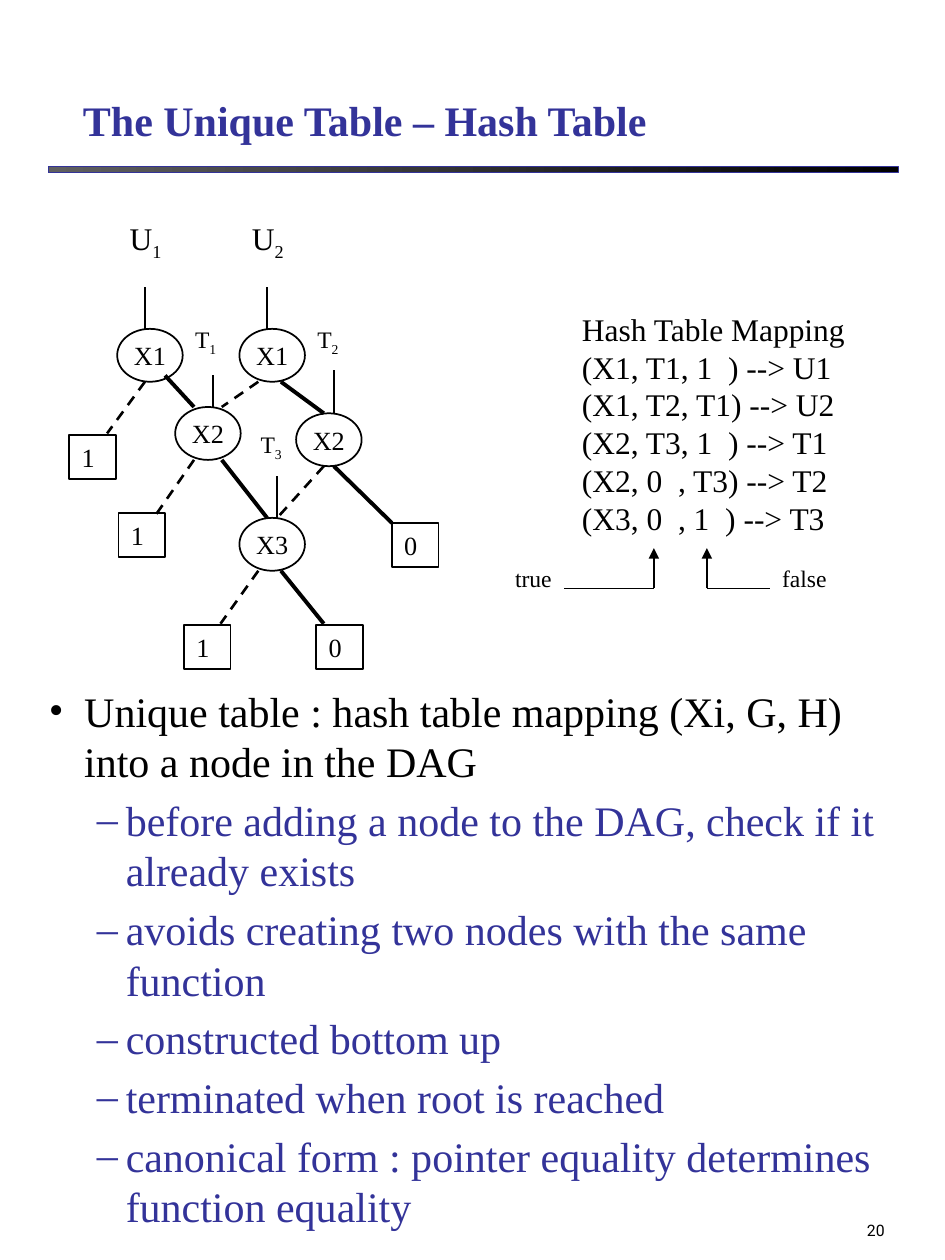
from collections import namedtuple

from lxml.etree import SubElement
from pptx import Presentation
from pptx.dml.color import RGBColor
from pptx.enum.dml import MSO_LINE
from pptx.enum.shapes import MSO_CONNECTOR, MSO_SHAPE
from pptx.enum.text import MSO_ANCHOR, PP_ALIGN
from pptx.oxml.ns import qn
from pptx.util import Inches, Pt

COLORS = {"ink": "000000", "accent": "333399", "rule": "5F5F5F"}
SERIF = "Times New Roman"
WIDTH, HEIGHT = Inches(7.5), Inches(10)
COL, ROW = WIDTH / 75, HEIGHT / 100

Box = namedtuple("Box", "x y w h")

NODE_SIZE, LEAF_SIZE = (5.2, 4.2), (3.7, 3.5)
NODES = [("X1", 3.8, 9.2), ("X1", 13.5, 9.2), ("X2", 8.4, 15.4),
         ("X2", 18, 15.9), ("X3", 13.5, 24.2)]
LEAVES = [("1", 0, 17.6), ("1", 3.9, 23.8), ("1", 9.1, 32.7),
          ("0", 19.6, 32.7), ("0", 25.6, 24.6)]
TRUE_EDGES = [(7.6, 12.9, 9.9, 15.4), (12.1, 19.6, 15.7, 24.2),
              (16.8, 13.4, 20.2, 15.9), (21, 20.1, 25.6, 24.6),
              (16.8, 28.4, 20.2, 32.6)]
FALSE_EDGES = [(6, 13.4, 3, 17.5), (9.9, 19.6, 6.7, 24.2),
               (15, 13.4, 12.1, 15.4), (20.2, 20.1, 16.5, 24.2),
               (15, 28.4, 12, 32.6)]
STEMS = [(6, 9.2, 3.3), (15.7, 9.2, 3.3), (11.4, 15.4, 2.5),
         (21, 15.9, 3.4), (16.5, 24.2, 3.3)]
LABELS = [("U", "1", 3.8, 0, 18), ("U", "2", 13.5, 0, 18),
          ("T", "1", 9, 8.4, 13.5), ("T", "2", 18.7, 8.4, 13.5),
          ("T", "3", 14.2, 16.7, 13.5)]
MAPPING = ["Hash Table Mapping", "(X1, T1, 1  ) --> U1", "(X1, T2, T1) --> U2",
           "(X2, T3, 1  ) --> T1", "(X2, 0  , T3) --> T2", "(X3, 0  , 1  ) --> T3"]
TOPIC = "Unique table : hash table mapping (Xi, G, H) into a node in the DAG"
POINTS = ["before adding a node to the DAG, check if it already exists",
          "avoids creating two nodes with the same function",
          "constructed bottom up",
          "terminated when root is reached",
          "canonical form : pointer equality determines function equality"]


def rgb(name):
    """Return the named colour."""
    return RGBColor.from_string(COLORS[name])


def inner(box, x, y, w, h):
    """Return a box placed from the top left of another."""
    return Box(box.x + x, box.y + y, w, h)


def emu(box):
    """Turn a box in columns and rows into slide lengths."""
    return [round(v * unit) for v, unit in zip(box, (COL, ROW, COL, ROW))]


def add_text(tf, text, size=18, color="ink", font=SERIF, bold=False, sub="",
             align=PP_ALIGN.LEFT, first=True):
    """Write one paragraph, with an optional subscript, and return it."""
    p = tf.paragraphs[0] if first else tf.add_paragraph()
    p.alignment = align
    for part in filter(None, (text, sub)):
        r = p.add_run()
        r.text = part
        r.font.size, r.font.name, r.font.bold = Pt(size), font, bold
        r.font.color.rgb = rgb(color)
    if sub:
        r.font._element.set("baseline", "-25000")
    return p


def add_box(slide, box, anchor=MSO_ANCHOR.TOP, wrap=True):
    """Add an empty text box and return its frame."""
    tf = slide.shapes.add_textbox(*emu(box)).text_frame
    tf.word_wrap, tf.vertical_anchor = wrap, anchor
    return tf


def add_shape(slide, kind, box):
    """Add an unfilled outlined shape."""
    sp = slide.shapes.add_shape(kind, *emu(box))
    sp.shadow.inherit = False
    sp.fill.background()
    sp.line.color.rgb, sp.line.width = rgb("ink"), Pt(1)
    return sp


def add_line(slide, box, x1, y1, x2, y2, width=1, dash=False, arrow=False):
    """Draw a straight line between two points of a box."""
    ends = emu(Box(box.x + x1, box.y + y1, box.x + x2, box.y + y2))
    ln = slide.shapes.add_connector(MSO_CONNECTOR.STRAIGHT, *ends)
    ln.line.color.rgb, ln.line.width = rgb("ink"), Pt(width)
    if dash:
        ln.line.dash_style = MSO_LINE.DASH
    if arrow:
        SubElement(ln.line._get_or_add_ln(), qn("a:tailEnd"), type="triangle")
    SubElement(ln._element.spPr, qn("a:effectLst"))


def add_header(slide, box):
    """Place the title above its gradient rule."""
    tf = add_box(slide, inner(box, 1.8, 0, 63.8, 6.9), MSO_ANCHOR.BOTTOM)
    add_text(tf, "The Unique Table – Hash Table", 24, "accent", bold=True)
    bar = add_shape(slide, MSO_SHAPE.RECTANGLE, inner(box, 0, 8.1, box.w, 0.5))
    bar.fill.gradient()
    bar.fill.gradient_angle = 0
    for stop, color in zip(bar.fill.gradient_stops, ("rule", "ink")):
        stop.color.rgb = rgb(color)
    bar.line.color.rgb, bar.line.width = rgb("accent"), Pt(0.25)


def add_graph(slide, box):
    """Draw the decision diagram with its nodes, leaves and edges."""
    for edge in TRUE_EDGES:
        add_line(slide, box, *edge, width=2.25)
    for edge in FALSE_EDGES:
        add_line(slide, box, *edge, width=1.5, dash=True)
    for x, y, length in STEMS:
        add_line(slide, box, x, y, x, y - length)
    for name, x, y in NODES:
        sp = add_shape(slide, MSO_SHAPE.OVAL, inner(box, x, y, *NODE_SIZE))
        sp.text_frame.word_wrap = False
        add_text(sp.text_frame, name, 15, align=PP_ALIGN.CENTER)
    for value, x, y in LEAVES:
        sp = add_shape(slide, MSO_SHAPE.RECTANGLE, inner(box, x, y, *LEAF_SIZE))
        sp.text_frame.vertical_anchor = MSO_ANCHOR.TOP
        add_text(sp.text_frame, value, 15)
    for name, sub, x, y, size in LABELS:
        add_text(add_box(slide, inner(box, x, y, 5.6, 4)), name, size, sub=sub)


def add_mapping(slide, box):
    """List the hash table entries and point out the two branches."""
    tf = add_box(slide, inner(box, 5.3, 0, 27.7, 19.2))
    for i, entry in enumerate(MAPPING):
        add_text(tf, entry, first=i == 0)
    base, tip = 22.6, 19.4
    for name, x, start, end in (("true", 0, 4.9, 12), ("false", 21.2, 21.2, 16.2)):
        tf = add_box(slide, inner(box, x, 20.2, 6.7, 4.4), wrap=False)
        add_text(tf, name, 13.5)
        add_line(slide, box, start, base, end, base)
        add_line(slide, box, end, base, end, tip, arrow=True)


def add_bullets(slide, box):
    """Write the topic and its points as a two-level list."""
    tf = add_box(slide, box)
    for i, text in enumerate([TOPIC] + POINTS):
        color, mark, left, hang = (("accent", "–", 0.61, 0.23) if i
                                   else ("ink", "•", 0.28, 0.28))
        p = add_text(tf, text, 24, color, first=i == 0)
        p.level, p.space_before = min(i, 1), Pt(4.8)
        pPr = p._p.get_or_add_pPr()
        pPr.set("marL", str(Inches(left)))
        pPr.set("indent", str(-Inches(hang)))
        SubElement(pPr, qn("a:buFont"), typeface=SERIF)
        SubElement(pPr, qn("a:buChar"), char=mark)


def add_page_number(slide, box):
    """Write the page number at the lower right."""
    tf = add_box(slide, box, MSO_ANCHOR.BOTTOM)
    add_text(tf, "20", 9, font="Roboto", align=PP_ALIGN.RIGHT)


def main():
    """Build and save the slide."""
    prs = Presentation()
    prs.slide_width, prs.slide_height = WIDTH, HEIGHT
    slide = prs.slides.add_slide(prs.slide_layouts[6])
    add_header(slide, Box(3.8, 5.1, 67.5, 8.6))
    add_page_number(slide, Box(55.6, 92.2, 15.6, 6.7))
    add_bullets(slide, Box(2.9, 53.9, 70, 44.9))
    add_mapping(slide, Box(39.9, 24.1, 33, 24.6))
    add_graph(slide, Box(5.5, 16.9, 29.3, 36.2))
    prs.save("out.pptx")


if __name__ == "__main__":
    main()
